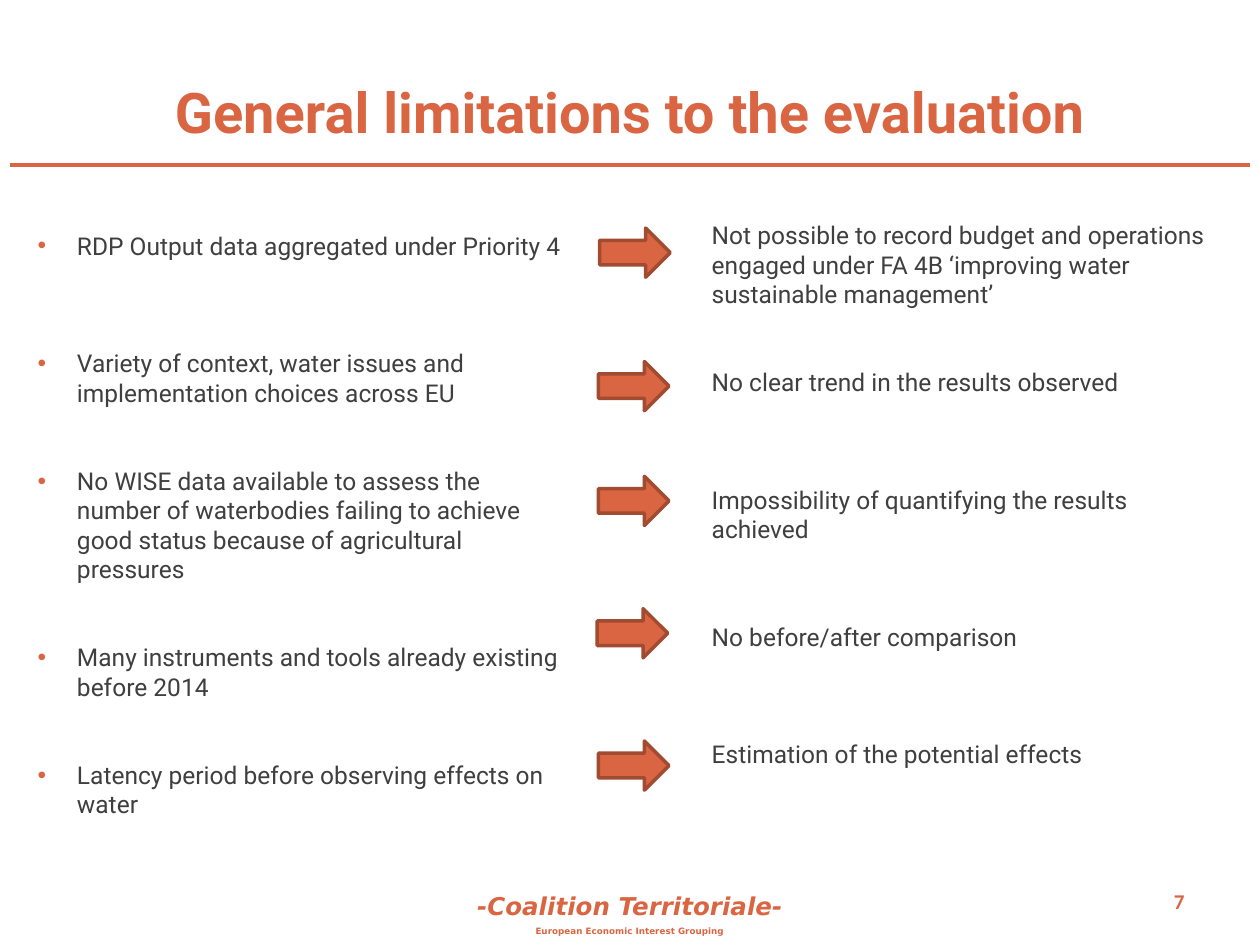
from dataclasses import dataclass

from lxml import etree
from pptx import Presentation
from pptx.dml.color import RGBColor
from pptx.enum.shapes import MSO_CONNECTOR, MSO_SHAPE
from pptx.enum.text import MSO_ANCHOR, MSO_AUTO_SIZE, PP_ALIGN
from pptx.oxml.ns import qn
from pptx.util import Pt

LEFT, CENTER, RIGHT = PP_ALIGN.LEFT, PP_ALIGN.CENTER, PP_ALIGN.RIGHT
TOP, MIDDLE = MSO_ANCHOR.TOP, MSO_ANCHOR.MIDDLE
NO_FIT = MSO_AUTO_SIZE.NONE
RIGHT_ARROW = MSO_SHAPE.RIGHT_ARROW
STRAIGHT = MSO_CONNECTOR.STRAIGHT

COLORS = {"accent": "DA6542", "outline": "A14B31", "text": "3F3F3F"}
BODY_FONT = "Roboto"
LINE = 16.8  # height of one body line
INDENT = 22.5
ARROW_SIZE = (40.3, 28.1)


@dataclass
class Box:
    left: float
    top: float
    width: float
    height: float


@dataclass
class Style:
    font: str
    size: float
    color: str
    bold: bool = False
    italic: bool = False


@dataclass
class Item:
    text: str
    before: float = 0


BODY = Style(BODY_FONT, 14, "text")
LIMITATIONS = [
    Item("RDP Output data aggregated under Priority 4"),
    Item("Variety of context, water issues and implementation choices across EU", 3 * LINE),
    Item("No WISE data available to assess the number of waterbodies failing to achieve "
         "good status because of agricultural pressures", 2 * LINE),
    Item("Many instruments and tools already existing before 2014", 2 * LINE),
    Item("Latency period before observing effects on water", 2 * LINE),
]
CONSEQUENCES = [
    Item("Not possible to record budget and operations engaged under FA 4B "
         "‘improving water sustainable management’", 0),
    Item("No clear trend in the results observed", 2 * LINE),
    Item("Impossibility of quantifying the results achieved", 3 * LINE),
    Item("No before/after comparison", 44.4),
    Item("Estimation of the potential effects", 3 * LINE),
]
ARROWS = [(342.7, 130.3), (342, 206.6), (342, 272.2), (341.3, 347.8), (342, 423.4)]


def rgb(name: str) -> RGBColor:
    return RGBColor.from_string(COLORS[name])


def add_run(p, text: str, style: Style) -> None:
    r = p.add_run()
    r.text = text
    f = r.font
    f.name, f.size = style.font, Pt(style.size)
    f.bold, f.italic = style.bold, style.italic
    f.color.rgb = rgb(style.color)


def add_bullet(p) -> None:
    """Give the paragraph a hanging indent and an accent bullet."""
    pPr = p._p.get_or_add_pPr()
    pPr.set("marL", str(Pt(INDENT)))
    pPr.set("indent", str(-Pt(INDENT)))
    color = etree.SubElement(pPr, qn("a:buClr"))
    etree.SubElement(color, qn("a:srgbClr"), val=COLORS["accent"])
    etree.SubElement(pPr, qn("a:buFont"), typeface="Arial")
    etree.SubElement(pPr, qn("a:buChar"), char="•")


def add_text(s, box: Box, lines: list[tuple[Item, Style]], align=LEFT,
             anchor=TOP, bullets: bool = False) -> None:
    sp = s.shapes.add_textbox(Pt(box.left), Pt(box.top), Pt(box.width), Pt(box.height))
    tf = sp.text_frame
    tf.word_wrap = True
    tf.vertical_anchor = anchor
    for i, (item, style) in enumerate(lines):
        p = tf.add_paragraph() if i else tf.paragraphs[0]
        p.alignment = align
        p.space_before = Pt(item.before)
        if bullets:
            add_bullet(p)
        add_run(p, item.text, style)


def set_title(s, text: str) -> None:
    sp = s.shapes.title
    sp.left, sp.top, sp.width, sp.height = Pt(36), Pt(43.2), Pt(648), Pt(40.3)
    tf = sp.text_frame
    tf.auto_size = NO_FIT
    tf.vertical_anchor = MIDDLE
    p = tf.paragraphs[0]
    p.alignment = CENTER
    add_run(p, text, Style(BODY_FONT, 32, "accent", bold=True))


def add_rule(s, left: float, right: float, y: float) -> None:
    line = s.shapes.add_connector(STRAIGHT, Pt(left), Pt(y), Pt(right), Pt(y))
    line.line.color.rgb = rgb("accent")
    line.line.width = Pt(2.75)
    etree.SubElement(line._element.spPr, qn("a:effectLst"))


def add_arrow(s, left: float, top: float) -> None:
    width, height = ARROW_SIZE
    sp = s.shapes.add_shape(RIGHT_ARROW, Pt(left), Pt(top), Pt(width), Pt(height))
    sp.shadow.inherit = False
    sp.fill.solid()
    sp.fill.fore_color.rgb = rgb("accent")
    sp.line.color.rgb = rgb("outline")
    sp.line.width = Pt(2)


def main() -> None:
    prs = Presentation()
    prs.slide_width, prs.slide_height = Pt(720), Pt(540)
    s = prs.slides.add_slide(prs.slide_layouts[5])

    footer = [
        (Item("-Coalition Territoriale-", 3),
         Style("DejaVu Sans", 14, "accent", bold=True, italic=True)),
        (Item("European Economic Interest Grouping", 3),
         Style("DejaVu Sans", 5, "accent", bold=True)),
    ]
    add_text(s, Box(0, 505.4, 720, 34.6), footer, CENTER)
    add_rule(s, 5.8, 714.2, 94.3)
    page_number = [(Item("7"), Style("Calibri", 12, "accent", bold=True))]
    add_text(s, Box(516.2, 500.4, 167.8, 28.8), page_number, RIGHT, MIDDLE)
    set_title(s, "General limitations to the evaluation")

    add_text(s, Box(14.4, 128.2, 317.5, 385.2),
             [(item, BODY) for item in LIMITATIONS], bullets=True)
    add_text(s, Box(399.6, 122.4, 306, 346.3), [(item, BODY) for item in CONSEQUENCES])
    for left, top in ARROWS:
        add_arrow(s, left, top)

    prs.save("out.pptx")


if __name__ == "__main__":
    main()
